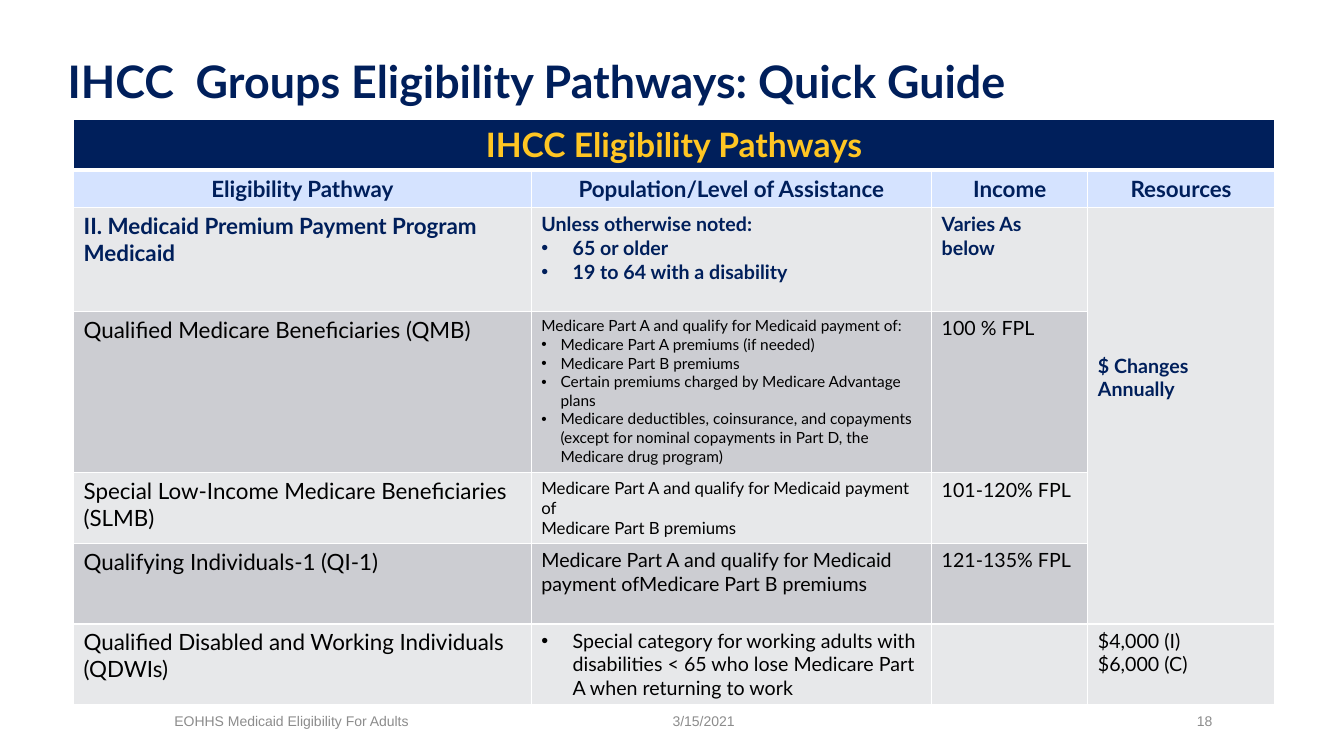
from dataclasses import dataclass

from lxml.etree import SubElement
from pptx import Presentation
from pptx.dml.color import RGBColor as Rgb
from pptx.enum.text import MSO_ANCHOR as Anchor, PP_ALIGN as Align
from pptx.oxml.ns import qn
from pptx.util import Emu, Pt


@dataclass(frozen=True)
class Theme:
    navy: str = "001F5B"
    gold: str = "FFC623"
    sky: str = "D5E3FF"
    light: str = "E7E8EA"
    dark: str = "CCCDD2"
    black: str = "000000"
    white: str = "FFFFFF"
    gray: str = "8C8C8C"
    body: str = "Lato"
    foot: str = "Arial"
    title: int = 32
    band: int = 24
    large: int = 16
    mid: int = 14
    small: int = 12
    tiny: int = 11
    note: int = 10


@dataclass(frozen=True)
class Cell:
    row: int
    col: int
    lines: tuple[str, ...]
    size: int
    indent: int = 0
    lead: int = 0
    top: int = 5


@dataclass(frozen=True)
class Label:
    text: str
    left: int
    width: int


THEME = Theme()
PX = 9144
COLS = (454, 397, 155, 185)
ROWS = (51, 37, 103, 160, 70, 80, 79)
FILLS = (THEME.navy, THEME.sky, THEME.light, THEME.dark,
         THEME.light, THEME.dark, THEME.light)
HEADS = ("Eligibility Pathway", "Population/Level of Assistance", "Income", "Resources")
PATHS = (
    "II. Medicaid Premium Payment Program Medicaid",
    "Qualified Medicare Beneficiaries (QMB)",
    "Special Low-Income Medicare Beneficiaries (SLMB)",
    "Qualifying Individuals-1 (QI-1)",
    "Qualified Disabled and Working Individuals (QDWIs)",
)
INCOME = ("Varies As below", "100 % FPL", "101-120% FPL", "121-135% FPL")
CELLS = (
    Cell(0, 0, ("IHCC Eligibility Pathways",), THEME.band),
    *(Cell(1, col, (head,), THEME.large) for col, head in enumerate(HEADS)),
    *(Cell(row, 0, (name,), THEME.large) for row, name in enumerate(PATHS, 2)),
    *(Cell(row, 2, (level,), THEME.mid) for row, level in enumerate(INCOME, 2)),
    Cell(2, 1, ("Unless otherwise noted:", "65 or older",
                "19 to 64 with a disability"), THEME.mid, indent=31, lead=1),
    Cell(3, 1, (
        "Medicare Part A and qualify for Medicaid payment of:",
        "Medicare Part A premiums (if needed)",
        "Medicare Part B premiums",
        "Certain premiums charged by Medicare Advantage plans",
        "Medicare deductibles, coinsurance, and copayments (except for nominal "
        "copayments in Part D, the Medicare drug program)",
    ), THEME.tiny, indent=19, lead=1),
    Cell(4, 1, ("Medicare Part A and qualify for Medicaid payment of",
                "Medicare Part B premiums"), THEME.small),
    Cell(5, 1, ("Medicare Part A and qualify for Medicaid payment "
                "ofMedicare Part B premiums",), THEME.mid),
    Cell(6, 1, ("Special category for working adults with disabilities < 65 "
                "who lose Medicare Part A when returning to work",),
         THEME.mid, indent=31),
    Cell(2, 3, ("$ Changes Annually",), THEME.mid, top=145),
    Cell(6, 3, ("$4,000 (I)", "$6,000 (C)"), THEME.mid),
)
FOOT = (
    Label("EOHHS Medicaid Eligibility For Adults", 173, 422),
    Label("3/15/2021", 667, 311),
    Label("18", 1187, 80),
)


def px(size: int) -> Emu:
    return Emu(size * PX)


def write(frame, *lines: str, size: int, color: str, font: str = THEME.body,
          bold: bool = False, align=Align.LEFT, indent: int = 0, lead: int = 0) -> None:
    for num, line in enumerate(lines):
        para = frame.add_paragraph() if num else frame.paragraphs[0]
        para.alignment = align
        if indent and num >= lead:
            props = para._p.get_or_add_pPr()
            props.set("marL", str(px(indent)))
            props.set("indent", str(-px(indent)))
            SubElement(props, qn("a:buFont"), typeface="Arial")
            SubElement(props, qn("a:buChar"), char="•")
        run = para.add_run()
        run.text = line
        run.font.name = font
        run.font.size = Pt(size)
        run.font.bold = bold
        run.font.color.rgb = Rgb.from_string(color)


def label(slide, text: str, left: int, top: int, width: int, height: int,
          **style) -> None:
    frame = slide.shapes.add_textbox(px(left), px(top), px(width), px(height)).text_frame
    frame.word_wrap = True
    frame.vertical_anchor = Anchor.MIDDLE
    frame.margin_left = frame.margin_right = 0
    frame.margin_top = frame.margin_bottom = 0
    write(frame, text, **style)


def paint(cell, row: int) -> None:
    props = cell._tc.get_or_add_tcPr()
    for side in ("L", "R", "T", "B"):
        thick = (row, side) in ((0, "B"), (1, "T"))
        line = SubElement(props, qn(f"a:ln{side}"), w=str(Pt(3 if thick else 1)))
        fill = SubElement(line, qn("a:solidFill"))
        SubElement(fill, qn("a:srgbClr"), val=THEME.white)
    cell.fill.solid()
    cell.fill.fore_color.rgb = Rgb.from_string(FILLS[row])


def grid(slide) -> None:
    table = slide.shapes.add_table(len(ROWS), len(COLS), px(73), px(118),
                                   px(sum(COLS)), px(sum(ROWS))).table
    table.first_row = table.horz_banding = False
    for col, width in zip(table.columns, COLS):
        col.width = px(width)
    for row, height in zip(table.rows, ROWS):
        row.height = px(height)
    for row in range(len(ROWS)):
        for col in range(len(COLS)):
            paint(table.cell(row, col), row)
    table.cell(0, 0).merge(table.cell(0, 3))
    table.cell(2, 3).merge(table.cell(5, 3))
    for item in CELLS:
        cell = table.cell(item.row, item.col)
        cell.margin_top = px(item.top)
        color = THEME.gold if item.row == 0 else THEME.navy if item.row < 3 else THEME.black
        write(cell.text_frame, *item.lines, size=item.size, color=color,
              bold=item.row < 3, align=Align.CENTER if item.row < 2 else Align.LEFT,
              indent=item.indent, lead=item.lead)


def main() -> None:
    deck = Presentation()
    deck.slide_width, deck.slide_height = px(1333), px(750)
    slide = deck.slides.add_slide(deck.slide_layouts[6])
    label(slide, "IHCC  Groups Eligibility Pathways: Quick Guide", 67, 30, 1200, 100,
          size=THEME.title, color=THEME.navy, bold=True)
    grid(slide)
    for item in FOOT:
        label(slide, item.text, item.left, 695, item.width, 40,
              size=THEME.note, color=THEME.gray, font=THEME.foot)
    deck.save("out.pptx")


if __name__ == "__main__":
    main()
